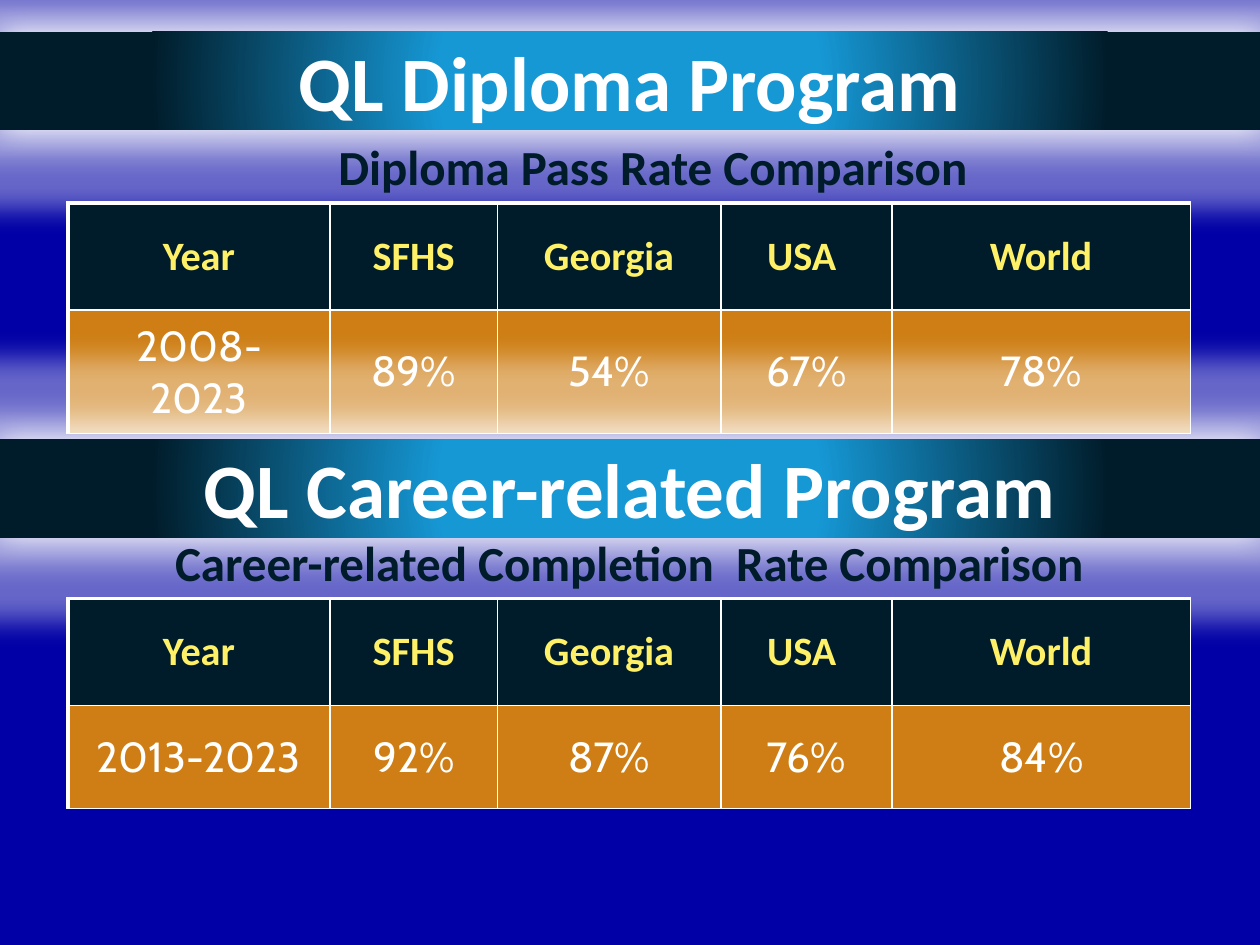
from dataclasses import dataclass
from pptx import Presentation
from pptx.dml.color import RGBColor
from pptx.enum.shapes import MSO_SHAPE
from pptx.enum.text import MSO_ANCHOR, MSO_AUTO_SIZE, PP_ALIGN
from pptx.oxml import parse_xml
from pptx.oxml.ns import nsdecls, qn
from pptx.util import Cm, Pt


@dataclass(frozen=True)
class Font:
    name: str
    size: int
    color: str
    bold: bool = True


@dataclass(frozen=True)
class Theme:
    back: str = "0000A6"
    dark: str = "001C2A"
    blue: str = "1698D5"
    gold: str = "CE7E14"
    white: str = "FFFFFF"
    title: Font = Font("Calibri", 44, "FFFFFF")
    label: Font = Font("Calibri", 28, "001C2A")
    head: Font = Font("Calibri", 23, "FFF167")
    body: Font = Font("Cabin", 24, "FFFFFF", False)
    thin: float = 1
    thick: float = 2.25


@dataclass(frozen=True)
class Box:
    left: float
    top: float
    width: float
    height: float

    def place(self) -> tuple:
        return Cm(self.left), Cm(self.top), Cm(self.width), Cm(self.height)


@dataclass(frozen=True)
class Program:
    title: str
    top: float
    label: str
    place: Box
    table: float
    rates: tuple


THEME = Theme()
HEADS = ("Year", "SFHS", "Georgia", "USA ", "World")
COLS = (5.28, 3.38, 4.5, 3.45, 6.02)
ROWS = (2.16, 2.08)
PROGRAMS = (
    Program("QL Diploma Program", 0.64, "Diploma Pass Rate Comparison",
            Box(5.54, 2.62, 15.24, 1.45), 4.09,
            ("2008-2023", "89%", "54%", "67%", "78%")),
    Program("QL Career-related Program", 8.86,
            "Career-related Completion  Rate Comparison",
            Box(2.84, 10.62, 19.69, 2.64), 12.06,
            ("2013-2023", "92%", "87%", "76%", "84%")),
)


def write(frame, text: str, font: Font) -> None:
    frame.text = text
    frame.word_wrap = True
    para = frame.paragraphs[0]
    para.alignment = PP_ALIGN.CENTER
    for run in para.runs:
        run.font.name = font.name
        run.font.size = Pt(font.size)
        run.font.bold = font.bold
        run.font.color.rgb = RGBColor.from_string(font.color)


def tint(color: str, alpha: int) -> str:
    return f'<a:srgbClr val="{color}"><a:alpha val="{alpha * 1000}"/></a:srgbClr>'


def add_band(slide, top: float) -> None:
    band = slide.shapes.add_shape(
        MSO_SHAPE.RECTANGLE, *Box(0, top, 25.4, 1.98).place())
    band.line.fill.background()
    band.shadow.inherit = False
    band.fill.gradient()
    props = band._element.spPr
    stops = "".join(
        f'<a:gs pos="{pos * 1000}"><a:srgbClr val="{color}"/></a:gs>'
        for pos, color in ((30, THEME.blue), (76, THEME.dark), (100, THEME.dark)))
    props.replace(props.find(qn("a:gradFill")), parse_xml(
        f'<a:gradFill {nsdecls("a")} rotWithShape="1"><a:gsLst>{stops}</a:gsLst>'
        '<a:path path="circle"><a:fillToRect l="50000" t="50000" r="50000" '
        'b="50000"/></a:path></a:gradFill>'))
    props.replace(props.find(qn("a:effectLst")), parse_xml(
        f'<a:effectLst {nsdecls("a")}>'
        f'<a:glow rad="{Cm(1.1)}">{tint(THEME.white, 40)}</a:glow>'
        f'<a:outerShdw blurRad="{Cm(0.6)}" dist="0">{tint(THEME.white, 100)}'
        '</a:outerShdw></a:effectLst>'))


def add_title(slide, text: str, top: float) -> None:
    spot = Box(0.43, top, 24.54, 2.13).place()
    title = slide.shapes.title
    if title.has_text_frame and not title.text_frame.text:
        title.left, title.top, title.width, title.height = spot
        slide.shapes._spTree.append(title._element)
    else:
        title = slide.shapes.add_textbox(*spot)
    write(title.text_frame, text, THEME.title)
    title.text_frame.vertical_anchor = MSO_ANCHOR.TOP
    title.text_frame.auto_size = MSO_AUTO_SIZE.SHAPE_TO_FIT_TEXT


def add_label(slide, text: str, box: Box) -> None:
    label = slide.shapes.add_textbox(*box.place())
    write(label.text_frame, text, THEME.label)


def add_edge(cell, side: str, width: float) -> None:
    cell._tc.get_or_add_tcPr().append(parse_xml(
        f'<a:ln{side} {nsdecls("a")} w="{Pt(width)}"><a:solidFill>'
        f'<a:srgbClr val="{THEME.white}"/></a:solidFill></a:ln{side}>'))


def add_rates(slide, top: float, rates: tuple) -> None:
    box = Box(1.37, top, sum(COLS), sum(ROWS))
    table = slide.shapes.add_table(len(ROWS), len(COLS), *box.place()).table
    table.first_row = table.horz_banding = False
    for col, width in zip(table.columns, COLS):
        col.width = Cm(width)
    for row, height in zip(table.rows, ROWS):
        row.height = Cm(height)
    looks = ((HEADS, THEME.head, THEME.dark), (rates, THEME.body, THEME.gold))
    for r, (texts, font, fill) in enumerate(looks):
        for c, text in enumerate(texts):
            cell = table.cell(r, c)
            write(cell.text_frame, text, font)
            cell.vertical_anchor = MSO_ANCHOR.MIDDLE
            cell.margin_left = cell.margin_right = Cm(0.43)
            cell.margin_top = cell.margin_bottom = Cm(0.23)
            add_edge(cell, "L", THEME.thin if c else THEME.thick)
            add_edge(cell, "R", THEME.thin)
            add_edge(cell, "T", THEME.thin if r else THEME.thick)
            add_edge(cell, "B", THEME.thin)
            cell.fill.solid()
            cell.fill.fore_color.rgb = RGBColor.from_string(fill)


def main() -> None:
    deck = Presentation()
    deck.slide_width, deck.slide_height = Cm(25.4), Cm(19.05)
    slide = deck.slides.add_slide(deck.slide_layouts[5])
    slide.background.fill.solid()
    slide.background.fill.fore_color.rgb = RGBColor.from_string(THEME.back)
    for item in PROGRAMS:
        add_band(slide, item.top)
        add_title(slide, item.title, item.top - 0.08)
        add_rates(slide, item.table, item.rates)
        add_label(slide, item.label, item.place)
    deck.save("out.pptx")


if __name__ == "__main__":
    main()
